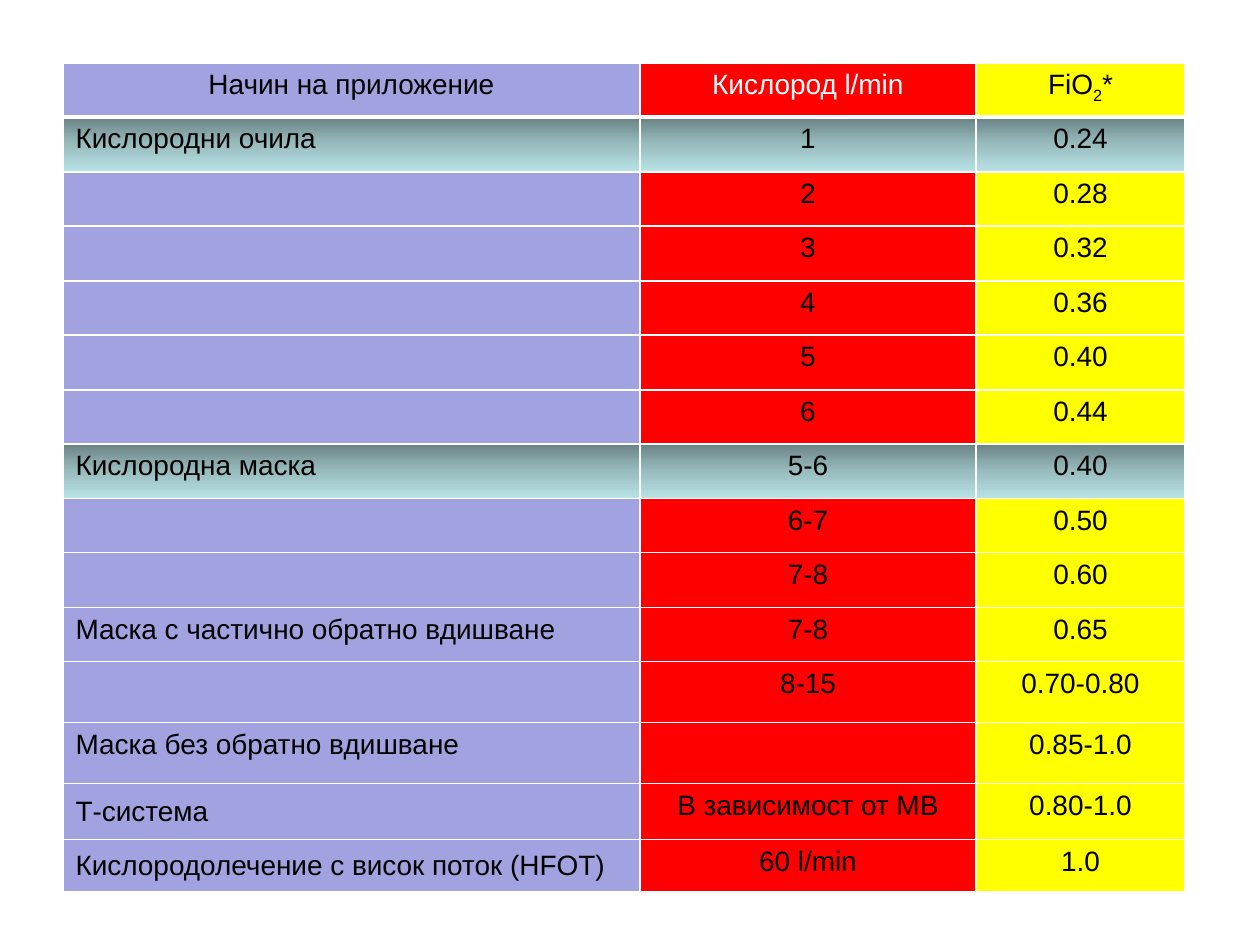
from copy import deepcopy

from lxml import etree
from pptx import Presentation
from pptx import util as u
from pptx.dml.color import RGBColor
from pptx.enum import text
from pptx.oxml.ns import qn

PX = 914400 // 126
FONT, SIZE = "Arial", 16
BLACK, WHITE = "000000", "FFFFFF"
COLUMN_FILLS = ["A2A2E0", "FF0000", "FFFF00"]
GRADIENT = [(0, "6A8284"), (0.5, "99BDBF"), (1, "B8E2E5")]
COLUMN_WIDTHS = [577, 336, 209]
ROW_TOPS = [109 * i // 2 for i in range(12)] + [660, 721, 777, 829]
DEVICE_ROWS = (1, 7)  # first rows of the two main devices
MIDDLE_ROWS = (13, 14)  # rows whose first cell is centred vertically

ROWS = [
    ("Начин на приложение", "Кислород l/min", "FiO2*"),
    ("Кислородни очила", "1", "0.24"),
    ("", "2", "0.28"),
    ("", "3", "0.32"),
    ("", "4", "0.36"),
    ("", "5", "0.40"),
    ("", "6", "0.44"),
    ("Кислородна маска", "5-6", "0.40"),
    ("", "6-7", "0.50"),
    ("", "7-8", "0.60"),
    ("Маска с частично обратно вдишване", "7-8", "0.65"),
    ("", "8-15", "0.70-0.80"),
    ("Маска без обратно вдишване", "", "0.85-1.0"),
    ("Т-система", "В зависимост от МВ", "0.80-1.0"),
    ("Кислородолечение с висок поток (HFOT)", "60 l/min", "1.0"),
]


def px(length):
    return u.Emu(length * PX)


def colour(value):
    return RGBColor.from_string(value)


def fill_solid(cell, value):
    cell.fill.solid()
    cell.fill.fore_color.rgb = colour(value)


def fill_gradient(cell):
    cell.fill.gradient()
    cell.fill.gradient_angle = 270
    stop_list = cell._tc.tcPr.find(".//" + qn("a:gsLst"))
    stop_list.insert(1, deepcopy(stop_list[0]))
    for stop, (position, value) in zip(cell.fill.gradient_stops, GRADIENT):
        stop.position = position
        stop.color.rgb = colour(value)


def set_borders(cell, top, bottom):
    """Draw white cell borders; the line elements go before the fill."""
    widths = {"lnL": 1, "lnR": 1, "lnT": top, "lnB": bottom}
    properties = cell._tc.get_or_add_tcPr()
    for index, (tag, width) in enumerate(widths.items()):
        line = etree.Element(qn("a:" + tag), w=str(u.Pt(width)))
        solid = etree.SubElement(line, qn("a:solidFill"))
        etree.SubElement(solid, qn("a:srgbClr"), val=WHITE)
        properties.insert(index, line)


def write_spans(para, parts, value):
    for part in parts:
        span = para.add_run()
        span.text = part
        span.font.name = FONT
        span.font.size = u.Pt(SIZE)
        span.font.color.rgb = colour(value)


def write_cell(cell, row, column, words):
    para = cell.text_frame.paragraphs[0]
    if row == 0 or column > 0:
        para.alignment = text.PP_ALIGN.CENTER
    if column == 0 and row in MIDDLE_ROWS:
        cell.vertical_anchor = text.MSO_ANCHOR.MIDDLE
    if words == "FiO2*":
        write_spans(para, ["FiO", "2", "*"], BLACK)
        para.runs[1].font._element.set("baseline", "-25000")
    elif words:
        write_spans(para, [words], WHITE if (row, column) == (0, 1) else BLACK)


def add_oxygen_table(page):
    frame = page.shapes.add_table(
        len(ROWS), len(COLUMN_WIDTHS), px(63), px(63),
        px(sum(COLUMN_WIDTHS)), px(ROW_TOPS[-1]))
    table = frame.table
    table.horz_banding = False
    for column, width in zip(table.columns, COLUMN_WIDTHS):
        column.width = px(width)
    for row, top, bottom in zip(table.rows, ROW_TOPS, ROW_TOPS[1:]):
        row.height = px(bottom - top)

    for r, values in enumerate(ROWS):
        for c, words in enumerate(values):
            cell = table.cell(r, c)
            if r in DEVICE_ROWS:
                fill_gradient(cell)
            else:
                fill_solid(cell, COLUMN_FILLS[c])
            # A thicker line parts the header from the body
            set_borders(cell, 3 if r == 1 else 1, 3 if r == 0 else 1)
            write_cell(cell, r, c, words)


def main():
    deck = Presentation()
    deck.slide_width, deck.slide_height = u.Inches(10), u.Inches(7.5)
    page = deck.slides.add_slide(deck.slide_layouts[6])
    add_oxygen_table(page)
    deck.save("out.pptx")


if __name__ == "__main__":
    main()
